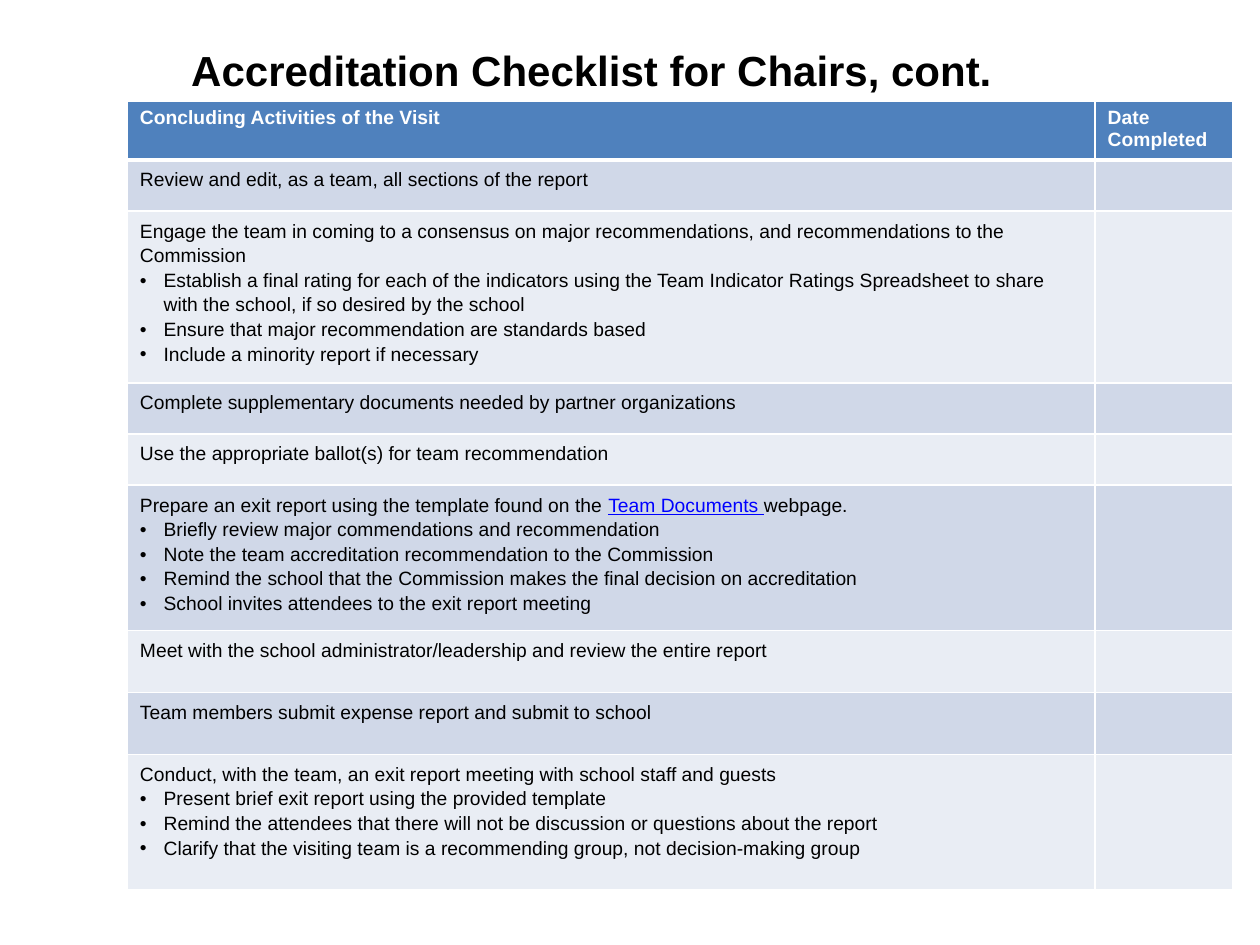
from lxml.etree import SubElement
from pptx import Presentation
from pptx.dml.color import RGBColor
from pptx.enum.text import MSO_ANCHOR, PP_ALIGN
from pptx.oxml.ns import qn
from pptx.util import Pt

FONT = "Arial"
COLORS = {
    "text": "000000", "link": "0000FF", "header": "4F81BD",
    "header_text": "FFFFFF", "border": "FFFFFF",
    "odd": "D0D8E8", "even": "E9EDF4",
}
TITLE = "Accreditation Checklist for Chairs, cont."
HEADERS = ["Concluding Activities of the Visit", "Date Completed"]
LINK = "Team Documents "

# Each activity: row height, lead sentence, bullets
ACTIVITIES = [
    (29.2, "Review and edit, as a team, all sections of the report", []),
    (91.4, "Engage the team in coming to a consensus on major recommendations, "
           "and recommendations to the Commission",
     ["Establish a final rating for each of the indicators using the Team Indicator "
      "Ratings Spreadsheet to share with the school, if so desired by the school",
      "Ensure that major recommendation are standards based",
      "Include a minority report if necessary"]),
    (29.2, "Complete supplementary documents needed by partner organizations", []),
    (29.2, "Use the appropriate ballot(s) for team recommendation", []),
    (77.4, "Prepare an exit report using the template found on the Team Documents webpage.",
     ["Briefly review major commendations and recommendation",
      "Note the team accreditation recommendation to the Commission",
      "Remind the school that the Commission makes the final decision on accreditation",
      "School invites attendees to the exit report meeting"]),
    (35.4, "Meet with the school administrator/leadership and review the entire report", []),
    (35.4, "Team members submit expense report and submit to school", []),
    (77.2, "Conduct, with the team, an exit report meeting with school staff and guests",
     ["Present brief exit report using the provided template",
      "Remind the attendees that there will not be discussion or questions about the report",
      "Clarify that the visiting team is a recommending group, not decision-making group"]),
]
HEADER_HEIGHT = 31.4
COLUMN_WIDTHS = [553, 78.4]
TABLE_LEFT, TABLE_TOP = 72.8, 57.8
BULLET_INDENT = 13.5


def style(font, size, color, bold=False):
    font.name, font.size, font.bold = FONT, Pt(size), bold
    font.color.rgb = RGBColor.from_string(COLORS[color])


def set_borders(cell, bottom=1):
    properties = cell._tc.get_or_add_tcPr()
    for index, (side, width) in enumerate(
            [("lnL", 1), ("lnR", 1), ("lnT", 1), ("lnB", bottom)]):
        line = properties.makeelement(qn(f"a:{side}"), {"w": str(Pt(width))})
        fill = SubElement(line, qn("a:solidFill"))
        SubElement(fill, qn("a:srgbClr"), val=COLORS["border"])
        properties.insert(index, line)


def paint(cell, color, bottom=1):
    cell.fill.solid()
    cell.fill.fore_color.rgb = RGBColor.from_string(COLORS[color])
    set_borders(cell, bottom)


def add_bullet(paragraph):
    properties = paragraph._p.get_or_add_pPr()
    properties.set("marL", str(Pt(BULLET_INDENT)))
    properties.set("indent", str(-Pt(BULLET_INDENT)))
    SubElement(properties, qn("a:buFont"), typeface=FONT)
    SubElement(properties, qn("a:buChar"), char="•")


def write_activity(cell, lead, bullets):
    text_frame = cell.text_frame
    text_frame.text = "\n".join([lead, *bullets])
    for index, paragraph in enumerate(text_frame.paragraphs):
        paragraph.line_spacing = 1.15
        if index:
            add_bullet(paragraph)
    # Split the lead sentence around the underlined phrase
    if LINK in lead:
        before, after = lead.split(LINK)
        paragraph = text_frame.paragraphs[0]
        paragraph.runs[0].text = before
        for text in (LINK, after):
            paragraph.add_run().text = text
    for paragraph in text_frame.paragraphs:
        for run in paragraph.runs:
            is_link = run.text == LINK
            style(run.font, 11, "link" if is_link else "text")
            run.font.underline = is_link


presentation = Presentation()
presentation.slide_width, presentation.slide_height = Pt(720), Pt(540)
slide = presentation.slides.add_slide(presentation.slide_layouts[6])

# Title
title = slide.shapes.add_textbox(Pt(102.2), Pt(19.4), Pt(581.8), Pt(49))
title_frame = title.text_frame
title_frame.word_wrap = True
title_frame.vertical_anchor = MSO_ANCHOR.TOP
title_frame.margin_top = Pt(6)
title_frame.text = TITLE
title_frame.paragraphs[0].alignment = PP_ALIGN.LEFT
style(title_frame.paragraphs[0].runs[0].font, 24, "text", bold=True)

# Table grid
heights = [HEADER_HEIGHT] + [height for height, _, _ in ACTIVITIES]
table = slide.shapes.add_table(
    len(heights), len(COLUMN_WIDTHS), Pt(TABLE_LEFT), Pt(TABLE_TOP),
    Pt(sum(COLUMN_WIDTHS)), Pt(sum(heights))).table
for column, width in zip(table.columns, COLUMN_WIDTHS):
    column.width = Pt(width)
for row, height in zip(table.rows, heights):
    row.height = Pt(height)

# Header row
for cell, text in zip(table.rows[0].cells, HEADERS):
    paint(cell, "header", bottom=3)
    cell.text_frame.text = text
    style(cell.text_frame.paragraphs[0].runs[0].font, 11, "header_text", bold=True)

# Activity rows
for number, (_, lead, bullets) in enumerate(ACTIVITIES, start=1):
    activity_cell, date_cell = table.rows[number].cells
    for cell in (activity_cell, date_cell):
        paint(cell, "odd" if number % 2 else "even", bottom=1)
    for cell in (activity_cell, date_cell) if number == 1 else ():
        cell._tc.tcPr.find(qn("a:lnT")).set("w", str(Pt(3)))
    write_activity(activity_cell, lead, bullets)
    date_cell.text_frame.paragraphs[0].font.size = Pt(11)

presentation.save("out.pptx")
